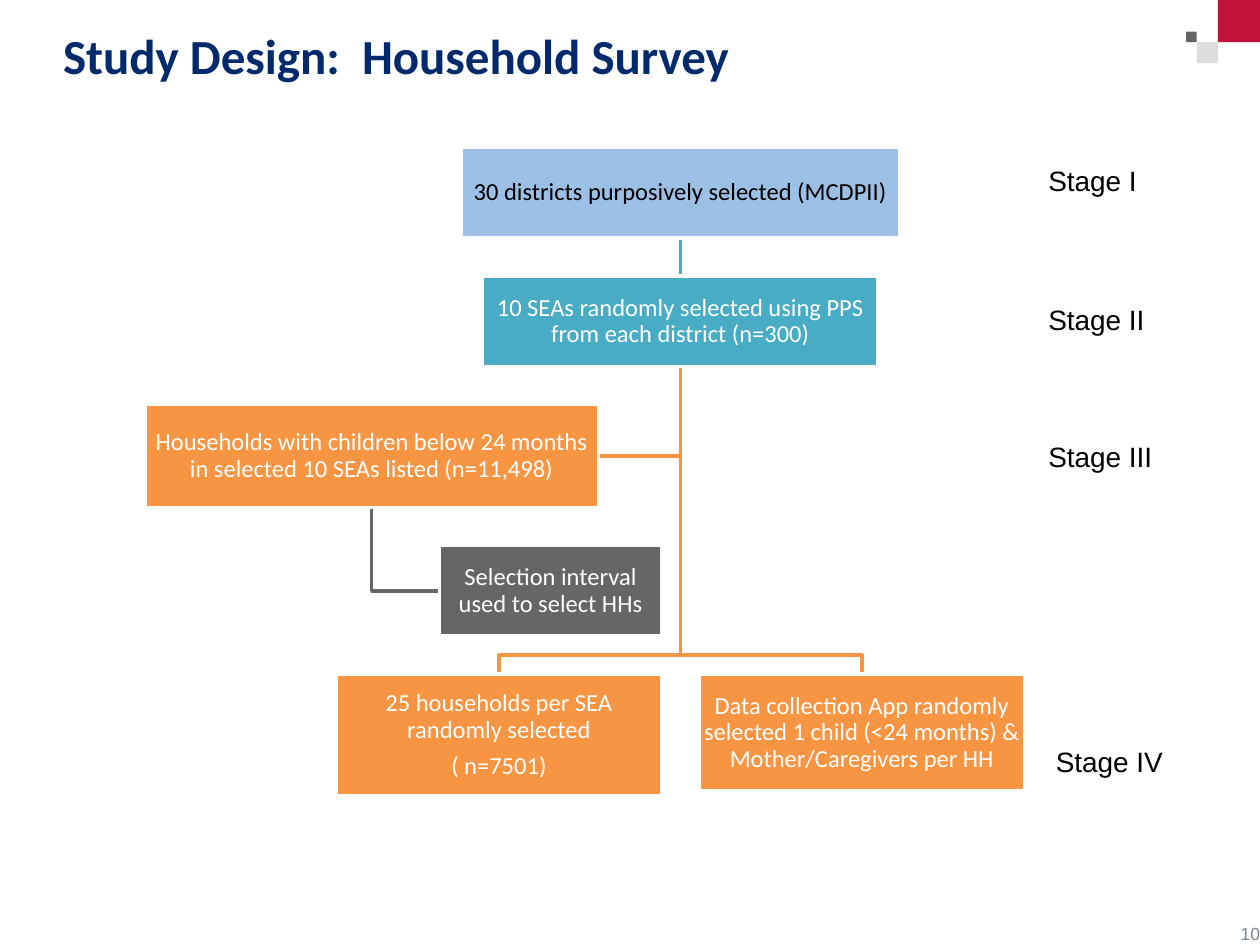
from dataclasses import dataclass

from lxml.etree import SubElement
from pptx import Presentation
from pptx.dml.color import RGBColor
from pptx.enum.shapes import MSO_CONNECTOR, MSO_SHAPE
from pptx.enum.text import MSO_ANCHOR, PP_ALIGN
from pptx.oxml.ns import qn
from pptx.util import Inches, Pt


@dataclass(frozen=True)
class Theme:
    """Colours, fonts and sizes of the slide."""
    navy: str = "002A6C"
    red: str = "C2113A"
    grey: str = "666666"
    pale: str = "DDDDDD"
    number: str = "768591"
    blue: str = "9CBFE5"
    teal: str = "49ACC5"
    orange: str = "F79543"
    white: str = "FFFFFF"
    black: str = "000000"
    heading_font: str = "Calibri"
    label_font: str = "Arial"
    title_size: int = 28
    stage_size: int = 16
    step_size: int = 14
    number_size: int = 10
    line_width: int = 2


@dataclass(frozen=True)
class Box:
    """A rectangle in grid units."""
    left: float
    top: float
    width: float
    height: float

    @property
    def right(self):
        """Return the right edge."""
        return self.left + self.width

    @property
    def bottom(self):
        """Return the bottom edge."""
        return self.top + self.height

    @property
    def center(self):
        """Return the horizontal centre."""
        return self.left + self.width / 2

    @property
    def middle(self):
        """Return the vertical centre."""
        return self.top + self.height / 2

    def inside(self, left, top, width, height):
        """Return a box placed relative to this one."""
        return Box(self.left + left, self.top + top, width, height)


THEME = Theme()
COLUMNS, ROWS = 100, 75
UNIT = Inches(10) / COLUMNS
GAP = 3


def grid(value):
    """Turn grid units into a slide length."""
    return round(value * UNIT)


def place(box):
    """Return left, top, width and height as slide lengths."""
    return [grid(value) for value in (box.left, box.top, box.width, box.height)]


def color(value):
    """Turn a hex string into a colour."""
    return RGBColor.from_string(value)


def write(frame, lines, font, size, ink, bold=False, align=PP_ALIGN.LEFT,
          anchor=MSO_ANCHOR.TOP, inset=0.0, spacing=None, before=0):
    """Fill a text frame with one paragraph for each line."""
    frame.word_wrap = True
    frame.vertical_anchor = anchor
    frame.margin_left = frame.margin_right = Inches(inset)
    frame.margin_top = frame.margin_bottom = Inches(inset)
    for index, line in enumerate(lines):
        paragraph = frame.add_paragraph() if index else frame.paragraphs[0]
        paragraph.alignment = align
        if spacing:
            paragraph.line_spacing = spacing
        if index:
            paragraph.space_before = Pt(before)
        run = paragraph.add_run()
        run.text = line
        run.font.name = font
        run.font.size = Pt(size)
        run.font.bold = bold
        run.font.color.rgb = color(ink)


def add_label(slide, box, line, font, size, ink, **options):
    """Add a plain text box."""
    frame = slide.shapes.add_textbox(*place(box)).text_frame
    write(frame, [line], font, size, ink, **options)


def add_rectangle(slide, box, fill):
    """Add a filled rectangle without an outline."""
    shape = slide.shapes.add_shape(MSO_SHAPE.RECTANGLE, *place(box))
    shape.shadow.inherit = False
    shape.fill.solid()
    shape.fill.fore_color.rgb = color(fill)
    shape.line.fill.background()
    return shape


def add_step(slide, box, lines, fill, ink=THEME.white):
    """Add one white-edged step of the flow."""
    shape = add_rectangle(slide, box, fill)
    shape.line.color.rgb = color(THEME.white)
    shape.line.width = Pt(THEME.line_width)
    write(shape.text_frame, lines, THEME.heading_font, THEME.step_size, ink,
          align=PP_ALIGN.CENTER, anchor=MSO_ANCHOR.MIDDLE, inset=0.01,
          spacing=0.9, before=5.6)


def add_link(slide, points, ink):
    """Draw a straight connector or a bent open line through the points."""
    corners = [(grid(x), grid(y)) for x, y in points]
    if len(corners) == 2:
        link = slide.shapes.add_connector(
            MSO_CONNECTOR.STRAIGHT, *corners[0], *corners[1])
        SubElement(link.element.spPr, qn("a:effectLst"))
    else:
        builder = slide.shapes.build_freeform(*corners[0])
        builder.add_line_segments(corners[1:], close=False)
        link = builder.convert_to_shape()
        link.shadow.inherit = False
        link.fill.background()
    link.line.color.rgb = color(ink)
    link.line.width = Pt(THEME.line_width)


def add_corner_mark(slide, box):
    """Draw three stepped squares in the top right corner."""
    tile = box.width / 7
    for column, row, size, fill in ((0, 3, 1, THEME.grey),
                                    (1, 4, 2, THEME.pale),
                                    (3, 0, 4, THEME.red)):
        square = box.inside(column * tile, row * tile, size * tile, size * tile)
        add_rectangle(slide, square, fill)


def add_flow(slide, box):
    """Draw the sampling steps and the links between them."""
    trunk, height, width = 42.5, 7.2, 25.8
    second_row = height + GAP
    third_row = second_row + height + GAP
    fourth_row = third_row + 8.2 + GAP
    last_row = fourth_row + height + GAP
    left_edge = trunk - GAP / 2

    districts = box.inside(trunk - 17.4, 0, 34.8, height)
    areas = box.inside(trunk - 15.7, second_row, 31.4, height)
    listed = box.inside(0, third_row, 36, 8.2)
    interval = box.inside(left_edge - 17.6, fourth_row, 17.6, height)
    households = box.inside(left_edge - width, last_row, width, 9.7)
    children = box.inside(trunk + GAP / 2, last_row, width, 9.3)

    add_link(slide, [(listed.center, listed.bottom),
                     (listed.center, interval.middle),
                     (interval.left, interval.middle)], THEME.grey)
    start = (areas.center, areas.bottom)
    add_link(slide, [start, (areas.center, listed.middle),
                     (listed.right, listed.middle)], THEME.orange)
    for target in (children, households):
        branch = target.top - GAP / 2
        add_link(slide, [start, (areas.center, branch), (target.center, branch),
                         (target.center, target.top)], THEME.orange)
    add_link(slide, [(districts.center, districts.bottom),
                     (areas.center, areas.top)], THEME.teal)

    add_step(slide, districts, ["30 districts purposively selected (MCDPII)"],
             THEME.blue, THEME.black)
    add_step(slide, areas, ["10 SEAs randomly selected using PPS from each district (n=300)"],
             THEME.teal)
    add_step(slide, households, ["25 households per SEA randomly selected", "( n=7501)"],
             THEME.orange)
    add_step(slide, children, ["Data collection App randomly selected 1 child (<24 months) "
                               "& Mother/Caregivers per HH"], THEME.orange)
    add_step(slide, listed, ["Households with children below 24 months in selected 10 SEAs "
                             "listed (n=11,498)"], THEME.orange)
    add_step(slide, interval, ["Selection interval used to select HHs"], THEME.grey)


def add_stages(slide, box):
    """Write the stage names beside the flow."""
    for name, left, top in (("Stage I", 0, 0), ("Stage II", 0, 11),
                            ("Stage III", 0, 21.9), ("Stage IV", 0.6, 46.1)):
        add_label(slide, box.inside(left, top, 10.3, 4.1), name,
                  THEME.label_font, THEME.stage_size, THEME.black)


def main():
    """Build and save the slide."""
    presentation = Presentation()
    presentation.slide_width = grid(COLUMNS)
    presentation.slide_height = grid(ROWS)
    slide = presentation.slides.add_slide(presentation.slide_layouts[6])
    add_corner_mark(slide, Box(94.15, 0, 5.85, 5))
    add_label(slide, Box(96.7, 71.9, 3.3, 3), "10", THEME.label_font, THEME.number_size,
              THEME.number, align=PP_ALIGN.RIGHT, anchor=MSO_ANCHOR.BOTTOM)
    add_label(slide, Box(5, 2, 89.1, 7.8), "Study Design:  Household Survey",
              THEME.heading_font, THEME.title_size, THEME.navy, bold=True)
    add_flow(slide, Box(11.5, 11.7, 69.8, 51.5))
    add_stages(slide, Box(83.2, 13, 10.9, 50.2))
    presentation.save("out.pptx")


if __name__ == "__main__":
    main()
